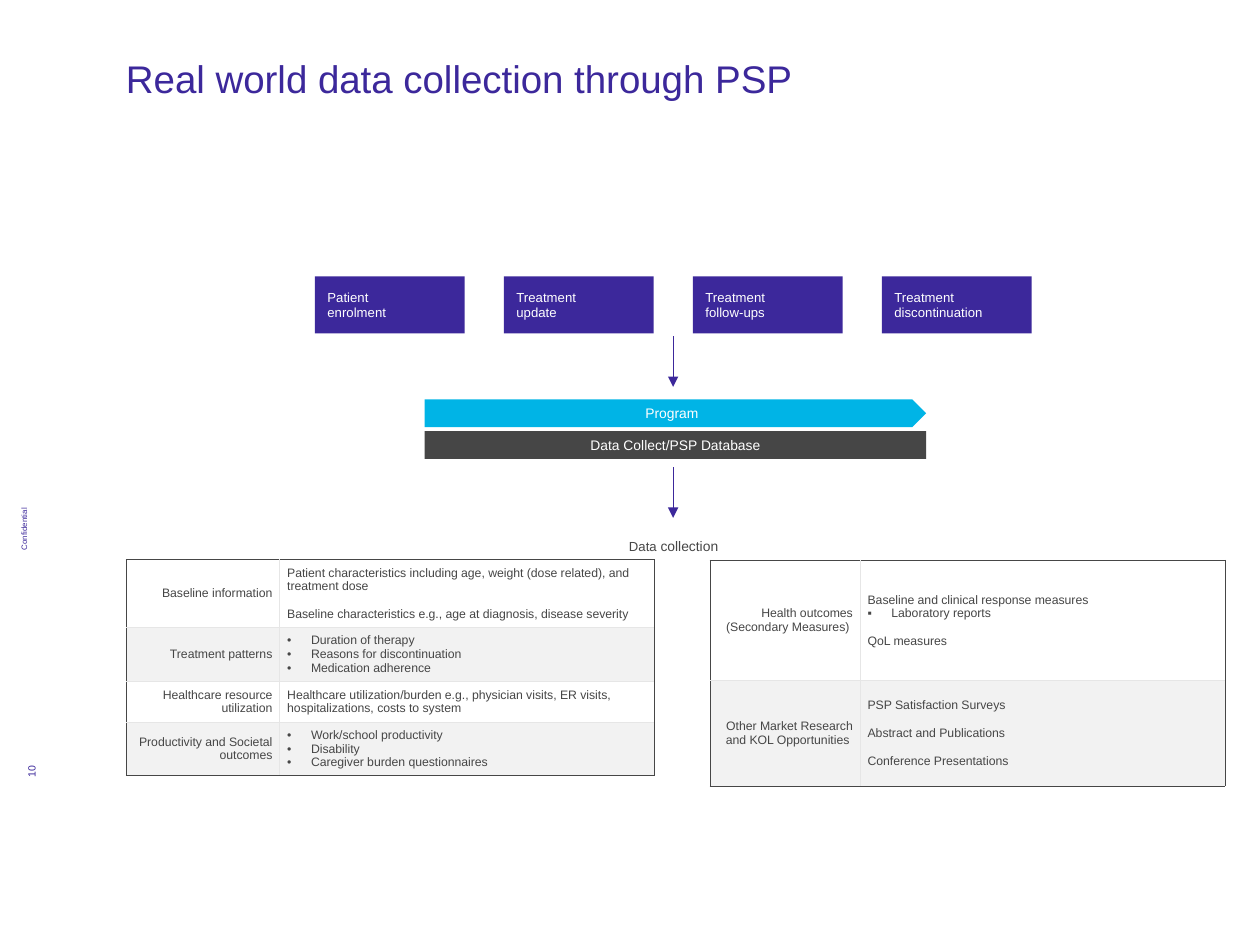
from lxml import etree
from pptx import Presentation
from pptx.dml.color import RGBColor
from pptx.enum.shapes import MSO_CONNECTOR, MSO_SHAPE
from pptx.enum.text import MSO_ANCHOR, PP_ALIGN
from pptx.oxml.ns import qn
from pptx.util import Cm, Pt

RECT, ARROW = MSO_SHAPE.RECTANGLE, MSO_SHAPE.PENTAGON
LINE = MSO_CONNECTOR.STRAIGHT
TOP, MID = MSO_ANCHOR.TOP, MSO_ANCHOR.MIDDLE
LEFT, MIDST, RIGHT = PP_ALIGN.LEFT, PP_ALIGN.CENTER, PP_ALIGN.RIGHT

FONT = "Arial"
PURPLE, BLUE, DARK = "3C289B", "00B4E6", "464646"
RULE, BAND, WHITE = "E6E6E6", "F2F2F2", "FFFFFF"

STEPS = [["Patient", "enrolment"], ["Treatment", "update"],
         ["Treatment", "follow-ups"], ["Treatment discontinuation"]]


def color(code):
    return RGBColor.from_string(code)


def add_run(para, text, size, code):
    run = para.add_run()
    run.text = text
    run.font.name = FONT
    run.font.size = Pt(size)
    run.font.color.rgb = color(code)


def write(frame, lines, size, code, align=LEFT, anchor=TOP):
    """Fill a frame; each line is a string or a list of (text, size)."""
    frame.word_wrap = True
    frame.vertical_anchor = anchor
    for i, line in enumerate(lines):
        para = frame.add_paragraph() if i else frame.paragraphs[0]
        para.alignment = align
        runs = [(line, size)] if isinstance(line, str) else line
        for text, pts in runs:
            add_run(para, text, pts, code)


def add_label(slide, box, lines, size, code, align=LEFT, anchor=TOP,
              inset=True, turn=0):
    shape = slide.shapes.add_textbox(*map(Cm, box))
    shape.rotation = turn
    frame = shape.text_frame
    if not inset:
        frame.margin_left = frame.margin_right = 0
        frame.margin_top = frame.margin_bottom = 0
    write(frame, lines, size, code, align, anchor)


def add_block(slide, kind, box, fill, lines, size, align=LEFT):
    shape = slide.shapes.add_shape(kind, *map(Cm, box))
    shape.shadow.inherit = False
    shape.fill.solid()
    shape.fill.fore_color.rgb = color(fill)
    shape.line.fill.background()
    write(shape.text_frame, lines, size, WHITE, align, MID)
    return shape


def add_arrow(slide, x, top, end):
    line = slide.shapes.add_connector(LINE, Cm(x), Cm(top), Cm(x), Cm(end))
    line.line.color.rgb = color(PURPLE)
    line.line.width = Pt(0.5)
    tip = etree.SubElement(line.line._get_or_add_ln(), qn("a:tailEnd"))
    tip.set("type", "triangle")
    etree.SubElement(line._element.spPr, qn("a:effectLst"))


# Table lines: (text, bullet mark, starts a new group)
def plain(text):
    return text, None, False


def group(text):
    return text, None, True


def point(text, mark="•"):
    return text, mark, False


def add_edge(cell, side, outer):
    edge = etree.SubElement(cell._tc.get_or_add_tcPr(), qn("a:ln" + side))
    edge.set("w", str(Pt(0.25 if outer else 0.5)))
    fill = etree.SubElement(edge, qn("a:solidFill"))
    etree.SubElement(fill, qn("a:srgbClr")).set("val", DARK if outer else RULE)


def fill_cell(cell, lines, align):
    cell.vertical_anchor = MID
    cell.margin_left = cell.margin_right = Cm(0.15)
    cell.margin_top = cell.margin_bottom = Cm(0.08)
    frame = cell.text_frame
    for i, (text, mark, new) in enumerate(lines):
        para = frame.add_paragraph() if i else frame.paragraphs[0]
        para.alignment = align
        if mark:
            props = para._p.get_or_add_pPr()
            props.set("marL", str(Cm(0.48)))
            props.set("indent", str(-Cm(0.48)))
            etree.SubElement(props, qn("a:buFont")).set("typeface", FONT)
            etree.SubElement(props, qn("a:buChar")).set("char", mark)
        if new:
            para.space_before = Pt(8)
        add_run(para, text, 7, DARK)


def add_grid(slide, left, top, cols, highs, rows):
    table = slide.shapes.add_table(
        len(rows), len(cols), Cm(left), Cm(top),
        Cm(sum(cols)), Cm(sum(highs))).table
    table.first_row = table.horz_banding = False
    for col, width in zip(table.columns, cols):
        col.width = Cm(width)
    for r, row in enumerate(rows):
        table.rows[r].height = Cm(highs[r])
        for c, lines in enumerate(row):
            cell = table.cell(r, c)
            fill_cell(cell, lines, LEFT if c else RIGHT)
            # Dark outer frame, pale inner rules
            for side, outer in (("L", c == 0), ("R", c == len(cols) - 1),
                                ("T", r == 0), ("B", r == len(rows) - 1)):
                add_edge(cell, side, outer)
            if r % 2:
                cell.fill.solid()
                cell.fill.fore_color.rgb = color(BAND)
            else:
                cell.fill.background()


def main():
    deck = Presentation()
    deck.slide_width, deck.slide_height = Cm(25.4), Cm(19.05)
    slide = deck.slides.add_slide(deck.slide_layouts[6])

    # Title
    add_label(slide, (2.54, 1.1, 22.15, 3.15),
              ["Real world data collection through PSP"], 22, PURPLE,
              inset=False)

    # Treatment steps
    for i, lines in enumerate(STEPS):
        add_block(slide, RECT, (6.35 + 3.81 * i, 5.57, 3.02, 1.15),
                  PURPLE, lines, 7.5)

    # Program and database bars
    add_block(slide, ARROW, (8.56, 8.05, 10.11, 0.56), BLUE,
              ["Program"], 7.9, MIDST)
    base = add_block(slide, ARROW, (8.56, 8.69, 10.11, 0.56), DARK,
                     ["Data Collect/PSP Database"], 7.9, MIDST)
    base.adjustments[0] = 0

    # Flow arrows
    for top in (6.78, 9.42):
        add_arrow(slide, 13.57, top, top + 1.02)

    # Data tables
    add_label(slide, (11.27, 10.71, 4.62, 0.56),
              [[("Data ", 7.5), ("collection", 7.9)]], 7.5, DARK, MIDST)
    add_grid(slide, 2.54, 11.28, [3.1, 7.54], [1.37, 1.08, 0.83, 1.07], [
        [[plain("Baseline information")],
         [plain("Patient characteristics including age, weight "
                "(dose related), and treatment dose"),
          group("Baseline characteristics e.g., age at diagnosis, "
                "disease severity")]],
        [[plain("Treatment patterns")],
         [point("Duration of therapy"), point("Reasons for discontinuation"),
          point("Medication adherence")]],
        [[plain("Healthcare resource utilization")],
         [plain("Healthcare utilization/burden e.g., physician visits, "
                "ER visits, hospitalizations, costs to system")]],
        [[plain("Productivity and Societal outcomes")],
         [point("Work/school productivity"), point("Disability"),
          point("Caregiver burden questionnaires")]],
    ])
    add_grid(slide, 14.31, 11.29, [3.03, 7.35], [2.43, 2.12], [
        [[plain("Health outcomes"), plain("(Secondary Measures) ")],
         [plain("Baseline and clinical response measures"),
          point("Laboratory reports", "▪"), group("QoL measures")]],
        [[plain("Other Market Research and KOL Opportunities ")],
         [plain("PSP Satisfaction Surveys"),
          group("Abstract and Publications"),
          group("Conference Presentations")]],
    ])

    # Margin notes
    add_label(slide, (0.38, 15.27, 0.51, 0.3), ["10"], 6, PURPLE,
              anchor=MID, inset=False, turn=270)
    add_label(slide, (0.02, 10.49, 0.97, 0.23), ["Confidential"], 4.5, PURPLE,
              inset=False, turn=270)

    deck.save("out.pptx")


if __name__ == "__main__":
    main()
